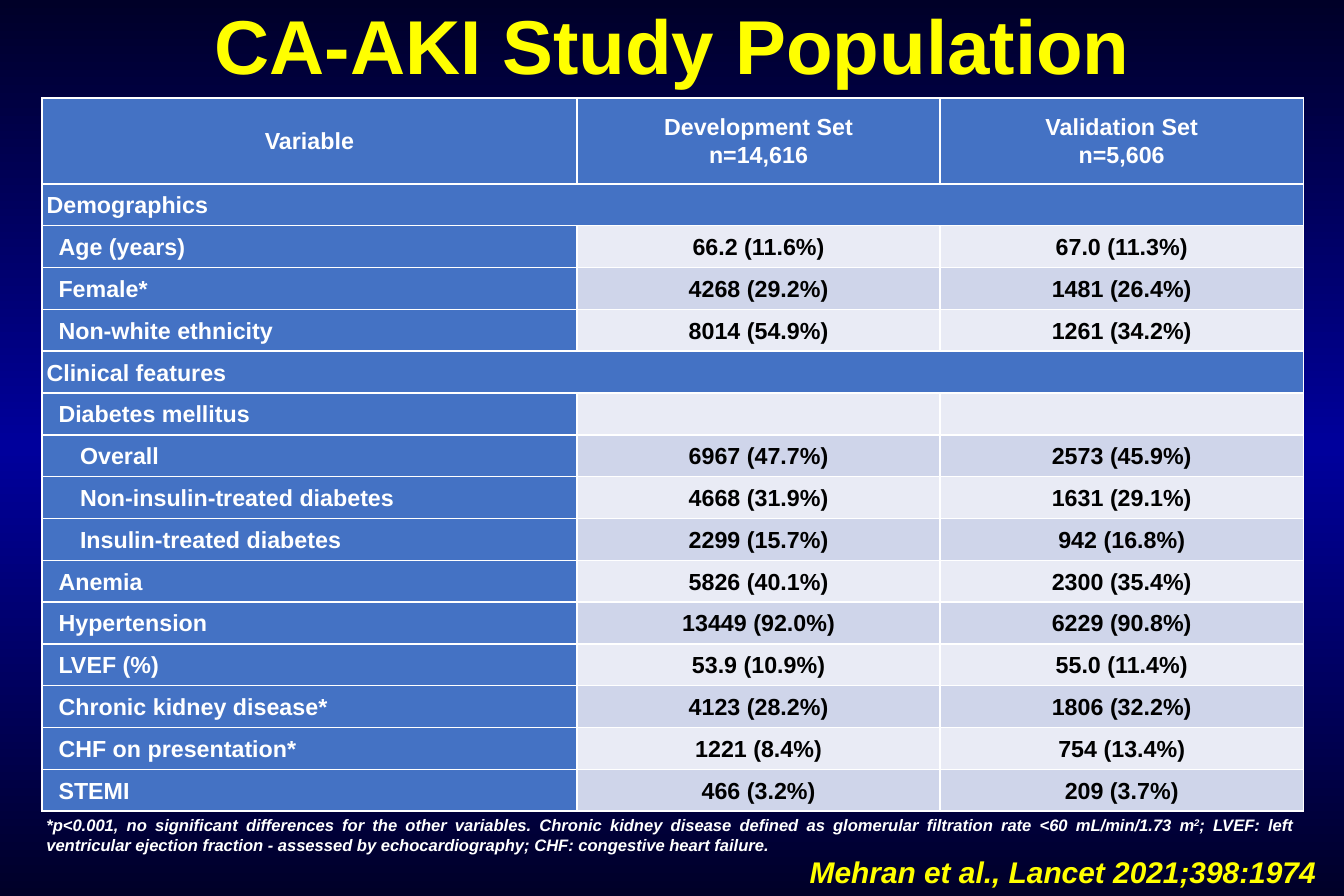
import copy

import pptx
import pptx.dml.color
import pptx.enum.text
import pptx.oxml
import pptx.oxml.ns
import pptx.util
from pptx.util import Inches

ALIGN = pptx.enum.text.PP_ALIGN
ANCHOR = pptx.enum.text.MSO_ANCHOR
AUTO_SIZE = pptx.enum.text.MSO_AUTO_SIZE

NAVY, BRIGHT_BLUE = "000028", "00009C"
YELLOW, WHITE, BLACK = "FFFF00", "FFFFFF", "000000"
HEADER_BLUE, BANDS = "4472C4", ("CFD5EA", "E9EBF5")

COLUMN_WIDTHS = (4.48, 3.04, 3.04)
HEADER_HEIGHT, ROW_HEIGHT = 0.72, 0.35
CELL_MARGIN = 0.04
INDENTS = (0, 0.1, 0.28)

HEADERS = ("Variable", "Development Set\nn=14,616", "Validation Set\nn=5,606")
# Indent level, variable, development set, validation set
ROWS = (
    (0, "Demographics", "", ""),
    (1, "Age (years)", "66.2 (11.6%)", "67.0 (11.3%)"),
    (1, "Female*", "4268 (29.2%)", "1481 (26.4%)"),
    (1, "Non-white ethnicity", "8014 (54.9%)", "1261 (34.2%)"),
    (0, "Clinical features", "", ""),
    (1, "Diabetes mellitus", "", ""),
    (2, "Overall", "6967 (47.7%)", "2573 (45.9%)"),
    (2, "Non-insulin-treated diabetes", "4668 (31.9%)", "1631 (29.1%)"),
    (2, "Insulin-treated diabetes", "2299 (15.7%)", "942 (16.8%)"),
    (1, "Anemia", "5826 (40.1%)", "2300 (35.4%)"),
    (1, "Hypertension", "13449 (92.0%)", "6229 (90.8%)"),
    (1, "LVEF (%)", "53.9 (10.9%)", "55.0 (11.4%)"),
    (1, "Chronic kidney disease*", "4123 (28.2%)", "1806 (32.2%)"),
    (1, "CHF on presentation*", "1221 (8.4%)", "754 (13.4%)"),
    (1, "STEMI", "466 (3.2%)", "209 (3.7%)"),
)


def rgb(color):
    return pptx.dml.color.RGBColor.from_string(color)


class SlideBuilder:
    font_name = "Arial"

    def __init__(self, presentation):
        self.slide = presentation.slides.add_slide(presentation.slide_layouts[5])

    def style(self, paragraph, size, color, align=ALIGN.LEFT, italic=False):
        paragraph.alignment = align
        font = paragraph.font
        font.name, font.size = self.font_name, pptx.util.Pt(size)
        font.bold, font.italic = True, italic
        font.color.rgb = rgb(color)

    def background(self, colors):
        fill = self.slide.background.fill
        fill.gradient()
        fill.gradient_angle = 90
        stop_list = self.slide.background._cSld.find(".//" + pptx.oxml.ns.qn("a:gsLst"))
        stop_list.append(copy.deepcopy(stop_list[0]))
        for index, (stop, color) in enumerate(zip(fill.gradient_stops, colors)):
            stop.position = index / (len(colors) - 1)
            stop.color.rgb = rgb(color)

    def title(self, text, left, top, width, height):
        shape = self.slide.shapes.title
        shape.left, shape.top = Inches(left), Inches(top)
        shape.width, shape.height = Inches(width), Inches(height)
        frame = shape.text_frame
        frame.auto_size = AUTO_SIZE.NONE
        frame.vertical_anchor = ANCHOR.MIDDLE
        paragraph = frame.paragraphs[0]
        paragraph.text = text
        paragraph.line_spacing = pptx.util.Pt(40)
        self.style(paragraph, 46, YELLOW, ALIGN.CENTER)

    def text(self, parts, left, top, width, height, size, color, align=ALIGN.LEFT):
        """Each part is a pair: text, and whether it is superscript."""
        box = self.slide.shapes.add_textbox(
            Inches(left), Inches(top), Inches(width), Inches(height))
        box.text_frame.word_wrap = True
        paragraph = box.text_frame.paragraphs[0]
        self.style(paragraph, size, color, align, italic=True)
        for text, superscript in parts:
            run = paragraph.add_run()
            run.text = text
            if superscript:
                run._r.get_or_add_rPr().set("baseline", "30000")

    def cell(self, cell, text, fill, color, align=ALIGN.CENTER, indent=0):
        properties = cell._tc.get_or_add_tcPr()
        for side in "LRTB":
            properties.append(pptx.oxml.parse_xml(
                f'<a:ln{side} {pptx.oxml.ns.nsdecls("a")} w="12700"><a:solidFill>'
                f'<a:srgbClr val="{WHITE}"/></a:solidFill></a:ln{side}>'))
        cell.fill.solid()
        cell.fill.fore_color.rgb = rgb(fill)
        cell.margin_left = Inches(CELL_MARGIN + indent)
        cell.margin_right = Inches(CELL_MARGIN)
        cell.margin_top = cell.margin_bottom = 0
        cell.vertical_anchor = ANCHOR.MIDDLE
        paragraph = cell.text_frame.paragraphs[0]
        paragraph.text = text
        paragraph.line_spacing = 1.07
        paragraph.space_after = pptx.util.Pt(8)
        self.style(paragraph, 14, color, align)

    def table(self, left, top):
        height = HEADER_HEIGHT + ROW_HEIGHT * len(ROWS)
        table = self.slide.shapes.add_table(
            len(ROWS) + 1, len(HEADERS), Inches(left), Inches(top),
            Inches(sum(COLUMN_WIDTHS)), Inches(height)).table
        for column, width in zip(table.columns, COLUMN_WIDTHS):
            column.width = Inches(width)
        for row in table.rows:
            row.height = Inches(ROW_HEIGHT)
        table.rows[0].height = Inches(HEADER_HEIGHT)

        for column, header in enumerate(HEADERS):
            self.cell(table.cell(0, column), header, HEADER_BLUE, WHITE)
        for row, (level, variable, *values) in enumerate(ROWS, start=1):
            is_section = level == 0
            self.cell(table.cell(row, 0), variable, HEADER_BLUE, WHITE,
                      ALIGN.LEFT, INDENTS[level])
            value_fill = HEADER_BLUE if is_section else BANDS[(row + 1) % 2]
            for column, value in enumerate(values, start=1):
                self.cell(table.cell(row, column), value, value_fill, BLACK)
            if is_section:
                table.cell(row, 0).merge(table.cell(row, len(values)))


def main():
    presentation = pptx.Presentation()
    presentation.slide_width = Inches(11.25)
    presentation.slide_height = Inches(7.5)
    builder = SlideBuilder(presentation)

    # Background and title
    builder.background((NAVY, BRIGHT_BLUE, NAVY))
    builder.title("CA-AKI Study Population", 0, 0, 11.25, 0.94)

    # Study population
    builder.table(0.35, 0.82)

    # Footnote and citation
    builder.text(
        (("*p<0.001, no significant differences for the other variables. Chronic kidney "
          "disease defined as glomerular filtration rate <60 mL/min/1.73 m", False),
         ("2", True),
         ("; LVEF: left ventricular ejection fraction - assessed by echocardiography; "
          "CHF: congestive heart failure.", False)),
        0.29, 6.77, 10.63, 0.44, 10, WHITE, ALIGN.JUSTIFY)
    builder.text((("Mehran et al., Lancet 2021;398:1974", False),),
                 6.68, 7.1, 4.57, 0.4, 18, YELLOW)

    presentation.save("out.pptx")


if __name__ == "__main__":
    main()
